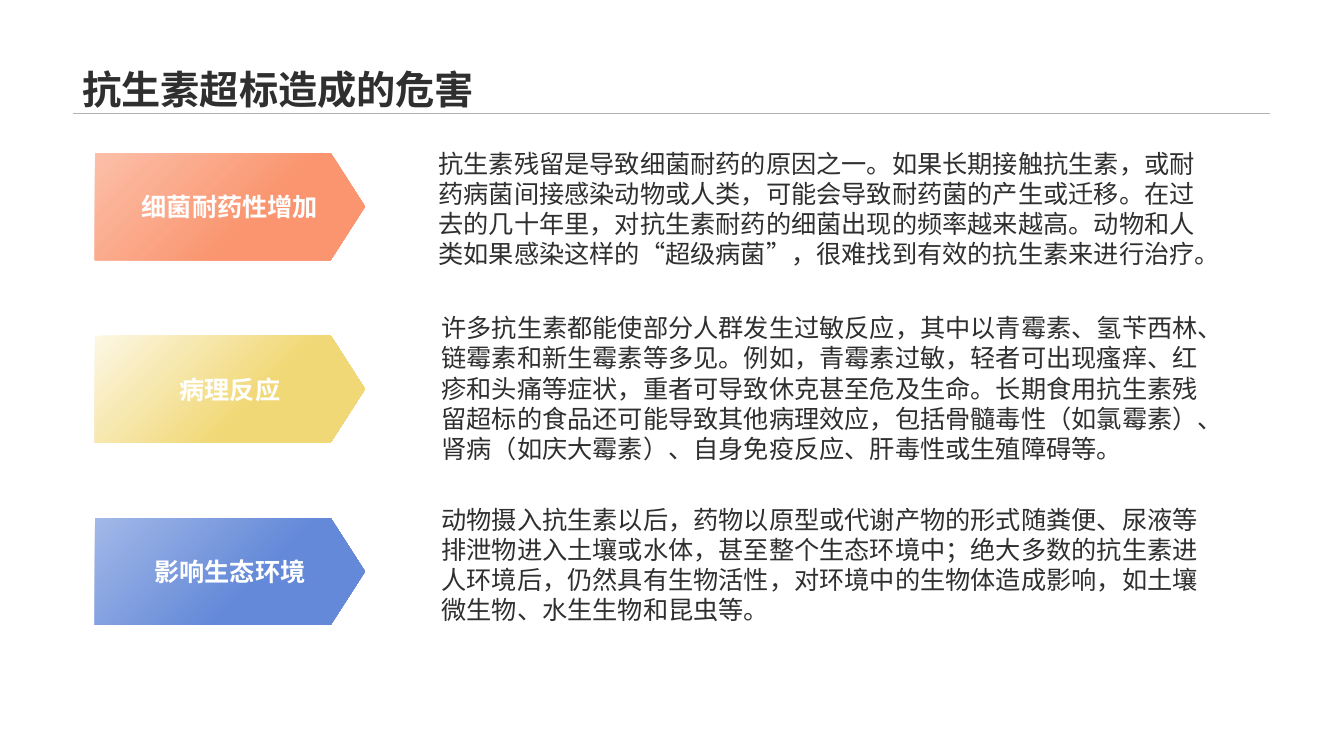
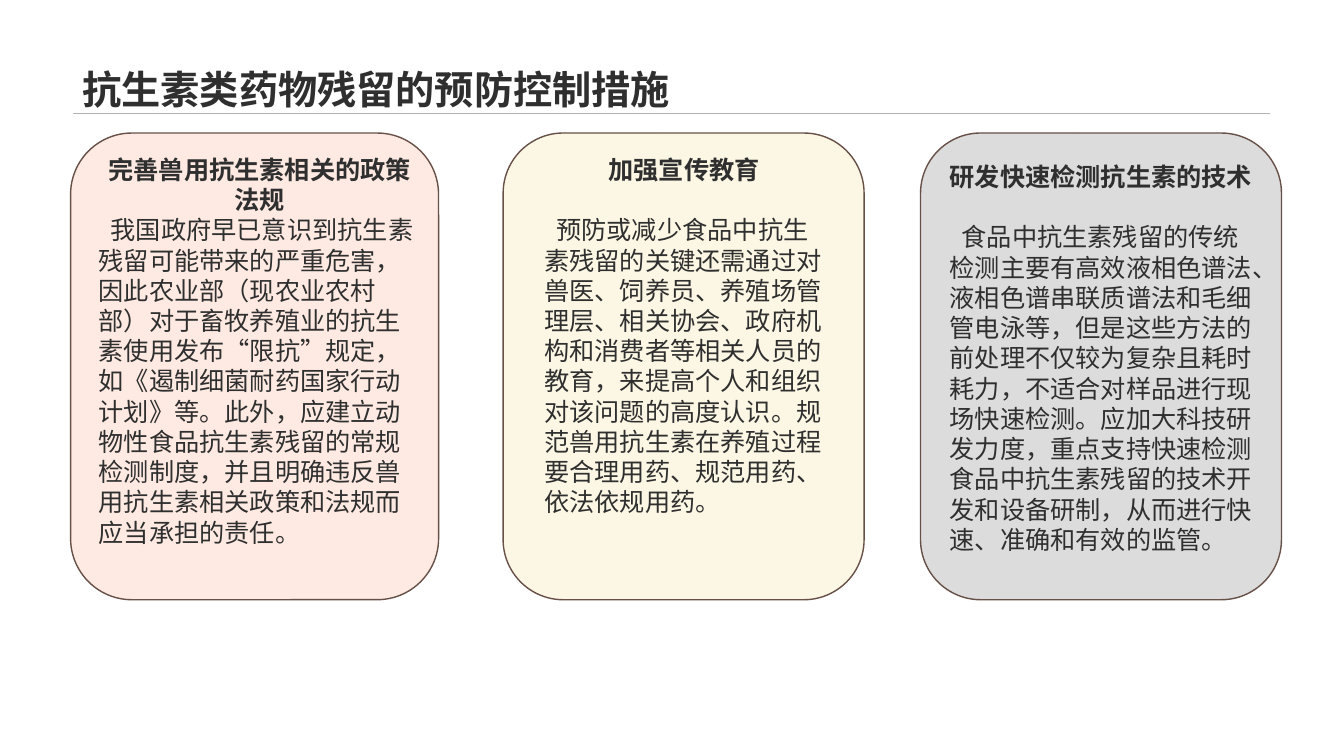
from lxml import etree
from pptx import Presentation
from pptx.dml.color import RGBColor
from pptx.enum.lang import MSO_LANGUAGE_ID as Language
from pptx.enum.shapes import MSO_CONNECTOR as Connector, MSO_SHAPE as Shape
from pptx.enum.text import MSO_ANCHOR as Anchor, PP_ALIGN as Align
from pptx.oxml.ns import qn
from pptx.util import Inches, Pt

INK, WHITE, RULE, OUTLINE = "2F2F2F", "FFFFFF", "B2B2B2", "665047"
HEADING_FONT, BODY_FONT = "Arial", "Noto Sans CJK SC"
TITLE_SIZE, TEXT_SIZE, LINE_PITCH = 28, 18, 21.6

HARMS = [
    ("细菌耐药性增加", "FCBFA9", "FA956F", (42.5, 14.2, 78.9, 13.4),
     "抗生素残留是导致细菌耐药的原因之一。如果长期接触抗生素，或耐药病菌间接感染动物或人类，"
     "可能会导致耐药菌的产生或迁移。在过去的几十年里，对抗生素耐药的细菌出现的频率越来越高。"
     "动物和人类如果感染这样的“超级病菌”，很难找到有效的抗生素来进行治疗。"),
    ("病理反应", "FCF7E4", "F1D876", (42.8, 30.5, 78.9, 16.2),
     "许多抗生素都能使部分人群发生过敏反应，其中以青霉素、氢苄西林、链霉素和新生霉素等多见。"
     "例如，青霉素过敏，轻者可出现瘙痒、红疹和头痛等症状，重者可导致休克甚至危及生命。"
     "长期食用抗生素残留超标的食品还可能导致其他病理效应，包括骨髓毒性（如氯霉素）、"
     "肾病（如庆大霉素）、自身免疫反应、肝毒性或生殖障碍等。"),
    ("影响生态环境", "A2B8E8", "6489D8", (42.8, 49.5, 78.5, 13.1),
     "动物摄入抗生素以后，药物以原型或代谢产物的形式随粪便、尿液等排泄物进入土壤或水体，"
     "甚至整个生态环境中；绝大多数的抗生素进人环境后，仍然具有生物活性，"
     "对环境中的生物体造成影响，如土壤微生物、水生生物和昆虫等。"),
]

# heading, alignment, gap below heading in lines, card colour, card left and width, text area, body
MEASURES = [
    ("完善兽用抗生素相关的政策法规", Align.CENTER, 0, "FEEAE2", (7, 36.5), (8.8, 14.8, 33.9, 40.4),
     "我国政府早已意识到抗生素残留可能带来的严重危害，因此农业部（现农业农村部）"
     "对于畜牧养殖业的抗生素使用发布“限抗”规定，如《遏制细菌耐药国家行动计划》等。"
     "此外，应建立动物性食品抗生素残留的常规检测制度，"
     "并且明确违反兽用抗生素相关政策和法规而应当承担的责任。"),
    ("加强宣传教育", Align.CENTER, 1, "FCF7E4", (49.9, 35.8), (53, 14.8, 29.7, 37.4),
     "预防或减少食品中抗生素残留的关键还需通过对兽医、饲养员、养殖场管理层、相关协会、"
     "政府机构和消费者等相关人员的教育，来提高个人和组织对该问题的高度认识。"
     "规范兽用抗生素在养殖过程要合理用药、规范用药、依法依规用药。"),
    ("研发快速检测抗生素的技术", Align.LEFT, 1, "DCDCDC", (91.3, 35.8), (93.2, 15.5, 32.8, 40.4),
     "食品中抗生素残留的传统检测主要有高效液相色谱法、液相色谱串联质谱法和毛细管电泳等，"
     "但是这些方法的前处理不仅较为复杂且耗时耗力，不适合对样品进行现场快速检测。"
     "应加大科技研发力度，重点支持快速检测食品中抗生素残留的技术开发和设备研制，"
     "从而进行快速、准确和有效的监管。"),
]


def rgb(value):
    return RGBColor.from_string(value)


def grid(*cells):
    """Turn grid columns or rows, ten to the inch, into lengths."""
    return [Inches(cell / 10) for cell in cells]


class Deck:
    """Holds the shared style and the slide being built."""

    def __init__(self):
        self.presentation = Presentation()
        self.presentation.slide_width = Inches(13.33)
        self.presentation.slide_height = Inches(7.5)

    def start_slide(self, title):
        slides = self.presentation.slides
        self.shapes = slides.add_slide(self.presentation.slide_layouts[6]).shapes
        rule = self.shapes.add_connector(Connector.STRAIGHT, *grid(7.2, 11.2, 126, 11.2))
        rule.line.color.rgb = rgb(RULE)
        rule.line.width = Pt(0.5)
        etree.SubElement(rule._element.spPr, qn("a:effectLst"))
        frame = self.text_area(7.2, 1.4, 118.8, 9.8)
        frame.vertical_anchor = Anchor.BOTTOM
        frame.margin_bottom = Inches(0.01)
        self.set_text(frame.paragraphs[0], title, HEADING_FONT, TITLE_SIZE, bold=True)

    def text_area(self, *area):
        frame = self.shapes.add_textbox(*grid(*area)).text_frame
        frame.word_wrap = True
        return frame

    def set_text(self, paragraph, text, face=BODY_FONT, size=TEXT_SIZE, color=INK,
                 bold=False, align=Align.LEFT):
        paragraph.text = text
        paragraph.alignment = align
        font = paragraph.font
        font.name, font.size, font.bold = face, Pt(size), bold
        font.language_id = Language.SIMPLIFIED_CHINESE
        font.color.rgb = rgb(color)
        latin = paragraph._p.pPr.find(qn("a:defRPr")).find(qn("a:latin"))
        east_asian = etree.Element(qn("a:ea"), typeface=BODY_FONT)
        latin.addnext(east_asian)

    def body(self, paragraph, text, **style):
        self.set_text(paragraph, text, **style)
        paragraph.line_spacing = Pt(LINE_PITCH)

    def arrow_label(self, text, top, light, strong):
        left, shoulder, tip, height = 9.4, 32.8, 36.2, 10.6
        bottom = top + height
        corners = [(shoulder, bottom), (left, bottom), (left, top),
                   (shoulder, top), (tip, top + height / 2)]
        start, *others = [grid(*corner) for corner in corners]
        outline = self.shapes.build_freeform(*start)
        outline.add_line_segments(others, close=True)
        arrow = outline.convert_to_shape()
        arrow.shadow.inherit = False
        arrow.line.fill.background()
        arrow.fill.gradient()
        arrow.fill.gradient_angle = 315
        for stop, color, position in zip(arrow.fill.gradient_stops, (light, strong), (0, 0.6)):
            stop.color.rgb = rgb(color)
            stop.position = position
        frame = arrow.text_frame
        frame.vertical_anchor = Anchor.MIDDLE
        self.set_text(frame.paragraphs[0], text, HEADING_FONT, color=WHITE,
                      bold=True, align=Align.CENTER)

    def card(self, left, width, color):
        card = self.shapes.add_shape(Shape.ROUNDED_RECTANGLE, *grid(left, 13.2, width, 46.3))
        card.shadow.inherit = False
        card.fill.solid()
        card.fill.fore_color.rgb = rgb(color)
        card.line.color.rgb = rgb(OUTLINE)
        card.line.width = Pt(1)

    def headed_text(self, area, heading, align, gap, text):
        frame = self.text_area(*area)
        first = frame.paragraphs[0]
        self.body(first, heading, bold=True, align=align)
        first.space_after = Pt(gap * LINE_PITCH)
        second = frame.add_paragraph()
        self.body(second, text)
        second._p.pPr.set("indent", str(Inches(0.12)))


def main():
    deck = Deck()
    deck.start_slide("抗生素超标造成的危害")
    for row, (label, light, strong, area, text) in enumerate(HARMS):
        deck.arrow_label(label, 15.2 + 18.1 * row, light, strong)
        deck.body(deck.text_area(*area).paragraphs[0], text)

    deck.start_slide("抗生素类药物残留的预防控制措施")
    for heading, align, gap, color, span, area, text in MEASURES:
        deck.card(*span, color)
        deck.headed_text(area, heading, align, gap, text)
    deck.presentation.save("out.pptx")


if __name__ == "__main__":
    main()
